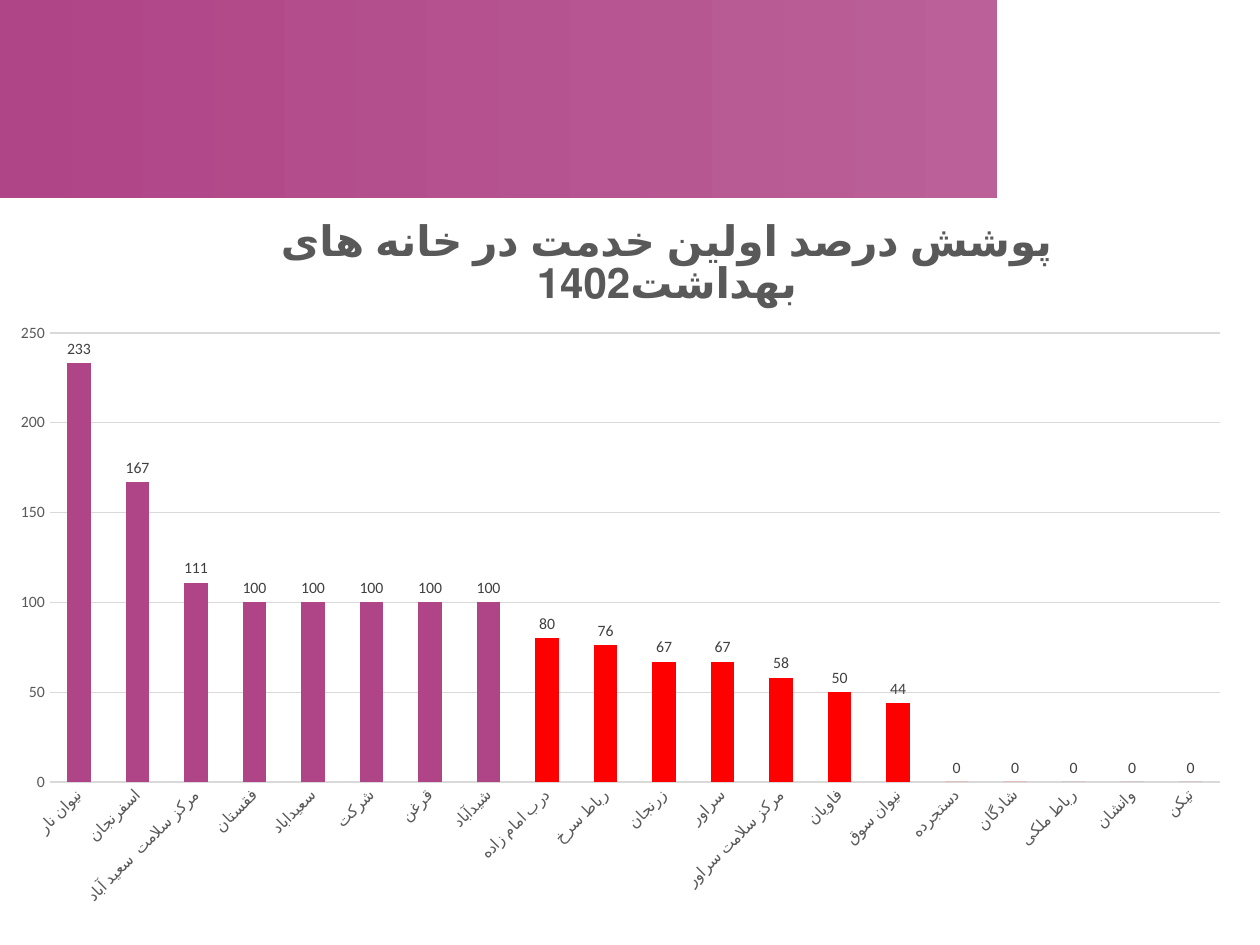
from lxml import etree
from pptx import Presentation
from pptx.chart.data import CategoryChartData
from pptx.dml.color import RGBColor
from pptx.enum.chart import XL_CHART_TYPE, XL_LABEL_POSITION, XL_TICK_MARK
from pptx.enum.shapes import MSO_SHAPE
from pptx.oxml import parse_xml
from pptx.oxml.ns import nsdecls
from pptx.util import Inches, Pt

COLUMNS = XL_CHART_TYPE.COLUMN_CLUSTERED
OUTSIDE_END = XL_LABEL_POSITION.OUTSIDE_END
NO_TICK = XL_TICK_MARK.NONE
RECTANGLE = MSO_SHAPE.RECTANGLE

COLORS = {
    "purple": "AF4486",
    "light_purple": "BB6098",
    "below_target": "FF0000",
    "axis_text": "595959",
    "label_text": "404040",
    "grid": "D9D9D9",
}
FONT = "Calibri"
TITLE = "پوشش درصد اولین خدمت در خانه های بهداشت1402"
COVERAGE = [
    ("نیوان نار", 233),
    ("اسفرنجان", 167),
    ("مرکز سلامت  سعید آباد", 111),
    ("فقستان", 100),
    ("سعیداباد", 100),
    ("شرکت", 100),
    ("قرغن", 100),
    ("شیدآباد", 100),
    ("درب امام زاده", 80),
    ("رباط سرخ", 76),
    ("زرنجان", 67),
    ("سراور", 67),
    ("مرکز سلامت سراور", 58),
    ("فاویان", 50),
    ("نیوان سوق", 44),
    ("دستجرده", 0),
    ("شادگان", 0),
    ("رباط ملکی", 0),
    ("وانشان", 0),
    ("تیکن", 0),
]
RED_BARS = range(8, 17)


def color(name):
    return RGBColor.from_string(COLORS[name])


def style_font(font, size, color_name, bold=False):
    values = {"name": FONT, "size": Pt(size), "bold": bold}
    for attribute, value in values.items():
        setattr(font, attribute, value)
    font.color.rgb = color(color_name)


def place(layout_parent, **fractions):
    layout = layout_parent.find("{*}layout")
    if layout is None:
        layout = parse_xml(f"<c:layout {nsdecls('c')}/>")
        overlay = layout_parent.find("{*}overlay")
        if overlay is None:
            layout_parent.insert(0, layout)
        else:
            overlay.addprevious(layout)
    for child in list(layout):
        layout.remove(child)
    settings = {"xMode": "edge", "yMode": "edge", **fractions}
    if "w" in fractions:
        settings = {"layoutTarget": "inner", **settings}
    namespace = layout.tag.split("}")[0] + "}"
    manual = etree.SubElement(layout, namespace + "manualLayout")
    for tag, value in settings.items():
        etree.SubElement(manual, namespace + tag).set("val", str(value))


def add_band(slide):
    band = slide.shapes.add_shape(RECTANGLE, 0, 0, Inches(7.91), Inches(1.57))
    band.shadow.inherit = False
    band.line.fill.background()
    band.fill.gradient()
    band.fill.gradient_angle = 0
    for stop, name in zip(band.fill.gradient_stops, ("purple", "light_purple")):
        stop.color.rgb = color(name)


def style_title(chart):
    chart.has_title = True
    title = chart.chart_title
    title.include_in_layout = False
    title.text_frame.text = TITLE
    style_font(title.text_frame.paragraphs[0].runs[0].font, 24, "axis_text", True)
    place(title._element, x=0.22, y=0.02)


def style_axes(chart):
    for axis in (chart.category_axis, chart.value_axis):
        axis.major_tick_mark = NO_TICK
        axis.minor_tick_mark = NO_TICK
        style_font(axis.tick_labels.font, 9, "axis_text")
        axis.format.line.fill.background()
    labels_body = chart.category_axis._element.find("{*}txPr/{*}bodyPr")
    labels_body.set("rot", "-2700000")
    values = chart.value_axis
    values.minimum_scale, values.maximum_scale, values.major_unit = 0, 250, 50
    values.tick_labels.number_format = "0"
    values.tick_labels.number_format_is_linked = False
    values.has_major_gridlines = True
    grid_line = values.major_gridlines.format.line
    grid_line.color.rgb = color("grid")
    grid_line.width = Pt(0.75)


def style_bars(plot):
    plot.gap_width = 150
    plot.vary_by_categories = False
    series = plot.series[0]
    series.invert_if_negative = False
    series.format.fill.solid()
    series.format.fill.fore_color.rgb = color("purple")
    for index in RED_BARS:
        fill = series.points[index].format.fill
        fill.solid()
        fill.fore_color.rgb = color("below_target")
    labels = series.data_labels
    settings = {
        "show_value": True,
        "number_format": "0",
        "number_format_is_linked": False,
        "position": OUTSIDE_END,
    }
    for attribute, value in settings.items():
        setattr(labels, attribute, value)
    style_font(labels.font, 9, "label_text")


def add_coverage_chart(slide):
    data = CategoryChartData(number_format="0")
    data.categories = [place_name for place_name, _ in COVERAGE]
    data.add_series("Series 1", [percent for _, percent in COVERAGE])
    chart = slide.shapes.add_chart(
        COLUMNS, 0, Inches(1.55), Inches(9.88), Inches(5.75), data
    ).chart
    chart.has_legend = False
    chart.font.name = FONT
    chart.font.size = Pt(10)
    style_title(chart)
    style_axes(chart)
    style_bars(chart.plots[0])
    plot_area = chart._chartSpace.find("{*}chart/{*}plotArea")
    place(plot_area, x=0.04, y=0.19, w=0.94, h=0.62)


def main():
    presentation = Presentation()
    presentation.slide_width = Inches(10)
    presentation.slide_height = Inches(7.5)
    slide = presentation.slides.add_slide(presentation.slide_layouts[6])
    add_band(slide)
    add_coverage_chart(slide)
    presentation.save("out.pptx")


if __name__ == "__main__":
    main()
